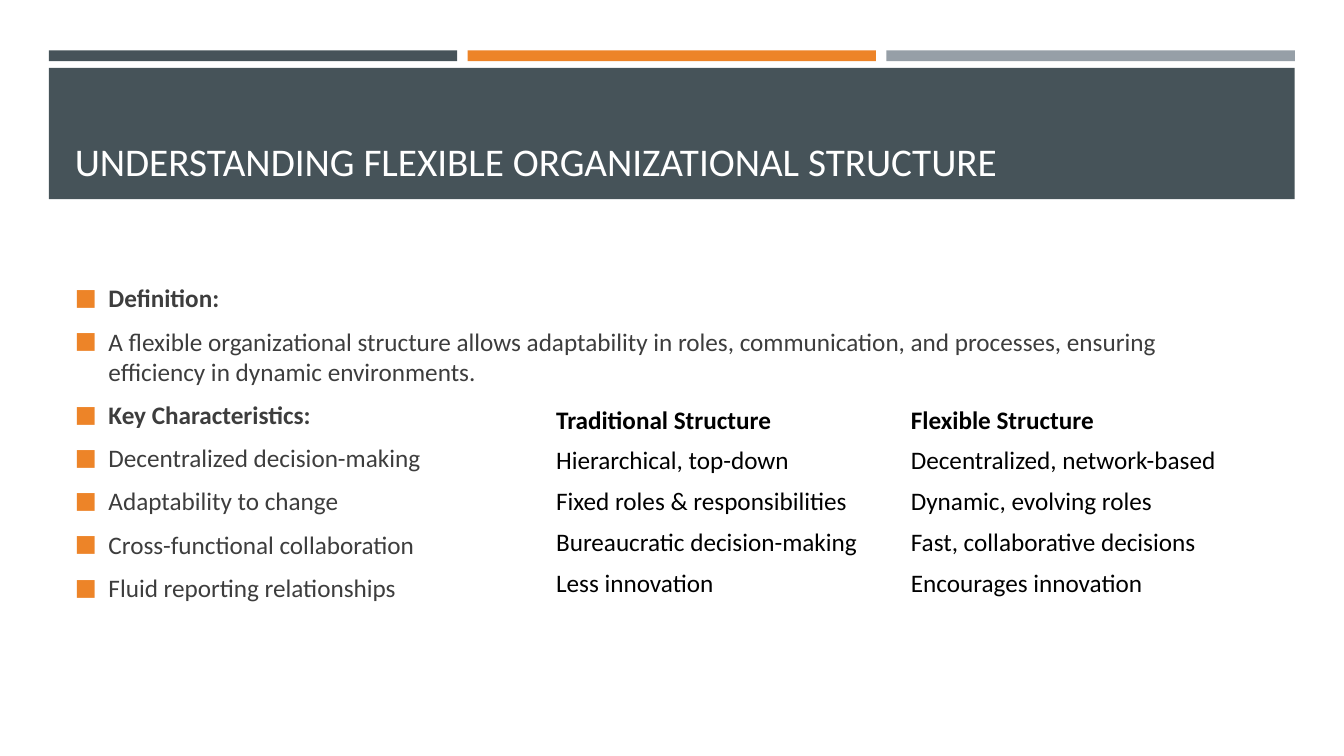
"""Build the slide on flexible organizational structure."""
import pptx
import pptx.dml.color
import pptx.enum.shapes
import pptx.enum.text
import pptx.util
from lxml import etree
from pptx.oxml.ns import qn

Cm, Pt = pptx.util.Cm, pptx.util.Pt
TEXT = pptx.enum.text

TITLE = "UNDERSTANDING FLEXIBLE ORGANIZATIONAL STRUCTURE"
POINTS = [
    ("Definition:", True),
    ("A flexible organizational structure allows adaptability in roles, "
     "communication, and processes, ensuring efficiency in dynamic "
     "environments.", False),
    ("Key Characteristics:", True),
    ("Decentralized decision-making", False),
    ("Adaptability to change", False),
    ("Cross-functional collaboration", False),
    ("Fluid reporting relationships", False),
]
ROWS = [
    ("Traditional Structure", "Flexible Structure"),
    ("Hierarchical, top-down", "Decentralized, network-based"),
    ("Fixed roles & responsibilities", "Dynamic, evolving roles"),
    ("Bureaucratic decision-making", "Fast, collaborative decisions"),
    ("Less innovation", "Encourages innovation"),
]
SLATE, ORANGE, GREY = "465359", "ED8428", "969FA7"
STRIPES = [SLATE, ORANGE, GREY]
LEFT, WIDE, GAP = 1.23, 31.4, 0.26


def tint(code):
    return pptx.dml.color.RGBColor.from_string(code)


def write(para, text, size=18, color="000000", bold=False):
    para.alignment = TEXT.PP_ALIGN.LEFT
    run = para.add_run()
    run.text = text
    font = run.font
    font.name, font.size, font.bold = "Calibri", Pt(size), bold
    font.color.rgb = tint(color)


def bullet(para):
    para.space_before, para.space_after = Pt(3.25), Pt(6)
    props = para._p.get_or_add_pPr()
    props.set("marL", str(Cm(0.85)))
    props.set("indent", str(-Cm(0.85)))
    shade = etree.SubElement(props, qn("a:buClr"))
    etree.SubElement(shade, qn("a:srgbClr"), val=ORANGE)
    etree.SubElement(props, qn("a:buSzPct"), val="92000")
    etree.SubElement(props, qn("a:buFont"), typeface="Calibri")
    etree.SubElement(props, qn("a:buChar"), char="■")


def place(shape, left, top, width, height, anchor):
    shape.left, shape.top = Cm(left), Cm(top)
    shape.width, shape.height = Cm(width), Cm(height)
    frame = shape.text_frame
    frame.word_wrap = True
    frame.auto_size = TEXT.MSO_AUTO_SIZE.NONE
    frame.vertical_anchor = anchor
    return frame


def main():
    deck = pptx.Presentation()
    deck.slide_width, deck.slide_height = Cm(33.87), Cm(19.05)
    slide = deck.slides.add_slide(deck.slide_layouts[1])
    title, body = slide.placeholders[0], slide.placeholders[1]

    def bar(left, top, width, height, color):
        box = slide.shapes.add_shape(
            pptx.enum.shapes.MSO_SHAPE.RECTANGLE,
            Cm(left), Cm(top), Cm(width), Cm(height))
        box.shadow.inherit = False
        box.fill.solid()
        box.fill.fore_color.rgb = tint(color)
        box.line.fill.background()
        title.element.addprevious(box.element)

    count = len(STRIPES)
    width = (WIDE - GAP * (count - 1)) / count
    for i, color in enumerate(STRIPES):
        bar(LEFT + i * (width + GAP), 1.27, width, 0.27, color)
    bar(LEFT, 1.71, WIDE, 3.31, SLATE)

    frame = place(title, 1.63, 1.95, 30.63, 2.82, TEXT.MSO_ANCHOR.BOTTOM)
    write(frame.paragraphs[0], TITLE, size=28, color="FFFFFF")

    frame = place(body, 1.63, 6.05, 29.54, 10.2, TEXT.MSO_ANCHOR.MIDDLE)
    for i, (text, bold) in enumerate(POINTS):
        para = frame.add_paragraph() if i else frame.paragraphs[0]
        write(para, text, color="3D3D3D", bold=bold)
        bullet(para)

    table = slide.shapes.add_table(
        len(ROWS), 2, Cm(13.76), Cm(10.08),
        Cm(17.88), Cm(1.03 * len(ROWS))).table
    table.first_row = table.horz_banding = False
    for i, row in enumerate(ROWS):
        for j, text in enumerate(row):
            cell = table.cell(i, j)
            cell.fill.background()
            cell.vertical_anchor = TEXT.MSO_ANCHOR.MIDDLE
            write(cell.text_frame.paragraphs[0], text, bold=i == 0)

    deck.save("out.pptx")


if __name__ == "__main__":
    main()
